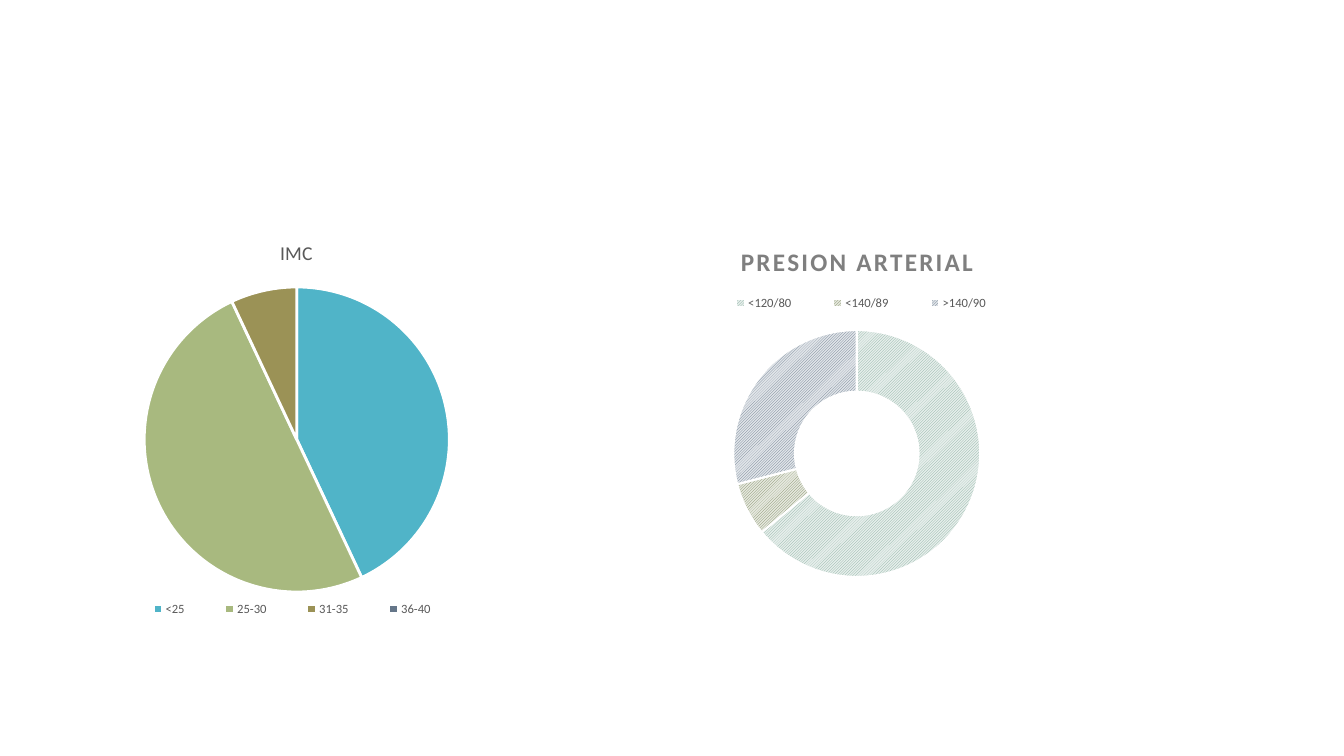
from lxml.etree import SubElement
from pptx import Presentation
from pptx.chart.data import CategoryChartData
from pptx.dml.color import RGBColor
from pptx.enum.chart import XL_CHART_TYPE, XL_LEGEND_POSITION
from pptx.enum.dml import MSO_PATTERN
from pptx.oxml.ns import qn
from pptx.util import Inches, Pt

FONT = "Calibri"
GREY = "595959"
# Legend and ring areas are shares of the chart: left, top, width, height
CHARTS = [
    {
        "kind": XL_CHART_TYPE.PIE,
        "place": (0.74, 2.2, 4.4, 4.12),
        "title": {"text": "IMC", "size": 14, "bold": False, "color": GREY, "spacing": 0},
        "legend": XL_LEGEND_POSITION.BOTTOM,
        "legend_area": (0.096, 0.895, 0.79, 0.075),
        "ring_area": (0.157, 0.157, 0.688, 0.735),
        "border": 2,
        # category, value, fill colour, pattern background
        "slices": [
            ("<25", 43, "50B4C8", None),
            ("25-30", 50, "A8B97F", None),
            ("31-35", 7, "9B9256", None),
            ("36-40", 0, "657689", None),
        ],
    },
    {
        "kind": XL_CHART_TYPE.DOUGHNUT,
        "place": (6.39, 2.25, 4.22, 3.62),
        "title": {"text": "PRESION ARTERIAL", "size": 18, "bold": True, "color": "7F7F7F", "spacing": 160},
        "legend": XL_LEGEND_POSITION.TOP,
        "legend_area": (0.127, 0.169, 0.766, 0.08),
        "ring_area": (0.209, 0.283, 0.581, 0.677),
        "border": 1.5,
        "slices": [
            ("<120/80", 64, "84AC9D", "E6EEEB"),
            ("<140/89", 7, "7A855D", "E5E8DE"),
            (">140/90", 29, "657689", "E0E4E8"),
        ],
        "hole": 70,
    },
]


def color(value):
    return RGBColor.from_string(value)


def style_font(font, size, value, bold=False):
    font.name, font.size, font.bold = FONT, Pt(size), bold
    font.color.rgb = color(value)


def add_title(chart, title):
    chart.has_title = True
    para = chart.chart_title.text_frame.paragraphs[0]
    span = para.add_run()
    span.text = title["text"]
    style_font(para.font, title["size"], title["color"], title["bold"])
    style_font(span.font, title["size"], title["color"], title["bold"])
    span.font._element.set("spc", str(title["spacing"]))
    chart.chart_title.include_in_layout = False


def add_legend(chart, position):
    chart.has_legend = True
    chart.legend.position = position
    chart.legend.include_in_layout = False
    style_font(chart.legend.font, 9, GREY)


def set_area(parent, area, index, inner=False):
    """Fix the area of a chart part; index is where its layout element belongs."""
    for old in parent.findall(qn("c:layout")):
        parent.remove(old)
    layout = SubElement(parent, qn("c:layout"))
    parent.insert(index, layout)
    manual = SubElement(layout, qn("c:manualLayout"))
    settings = [("layoutTarget", "inner")] if inner else []
    settings += [("xMode", "edge"), ("yMode", "edge")]
    settings += zip("xywh", area)
    for name, value in settings:
        SubElement(manual, qn(f"c:{name}")).set("val", str(value))


def paint_slice(point, front, back, border):
    fill = point.format.fill
    if back:
        fill.patterned()
        fill.pattern = MSO_PATTERN.LIGHT_UPWARD_DIAGONAL
        fill.back_color.rgb = color(back)
    else:
        fill.solid()
    fill.fore_color.rgb = color(front)
    point.format.line.color.rgb = color("FFFFFF")
    point.format.line.width = Pt(border)


def add_share_chart(page, content):
    names, values, fronts, backs = zip(*content["slices"])
    data = CategoryChartData()
    data.categories = names
    data.add_series("Series 1", values)
    place = [Inches(length) for length in content["place"]]
    chart = page.shapes.add_chart(content["kind"], *place, data).chart
    style_font(chart.font, 10, "000000")
    add_title(chart, content["title"])
    add_legend(chart, content["legend"])
    set_area(chart.element.xpath(".//c:legend")[0], content["legend_area"], 1)
    set_area(chart.element.xpath(".//c:plotArea")[0], content["ring_area"], 0, inner=True)
    plot = chart.plots[0]
    plot.vary_by_categories = True
    for index, (front, back) in enumerate(zip(fronts, backs)):
        paint_slice(plot.series[0].points[index], front, back, content["border"])
    for hole in chart.element.xpath(".//c:holeSize"):
        hole.set("val", str(content["hole"]))


def main():
    deck = Presentation()
    deck.slide_width, deck.slide_height = Inches(13.33), Inches(7.5)
    page = deck.slides.add_slide(deck.slide_layouts[6])
    for content in CHARTS:
        add_share_chart(page, content)
    deck.save("out.pptx")


if __name__ == "__main__":
    main()
